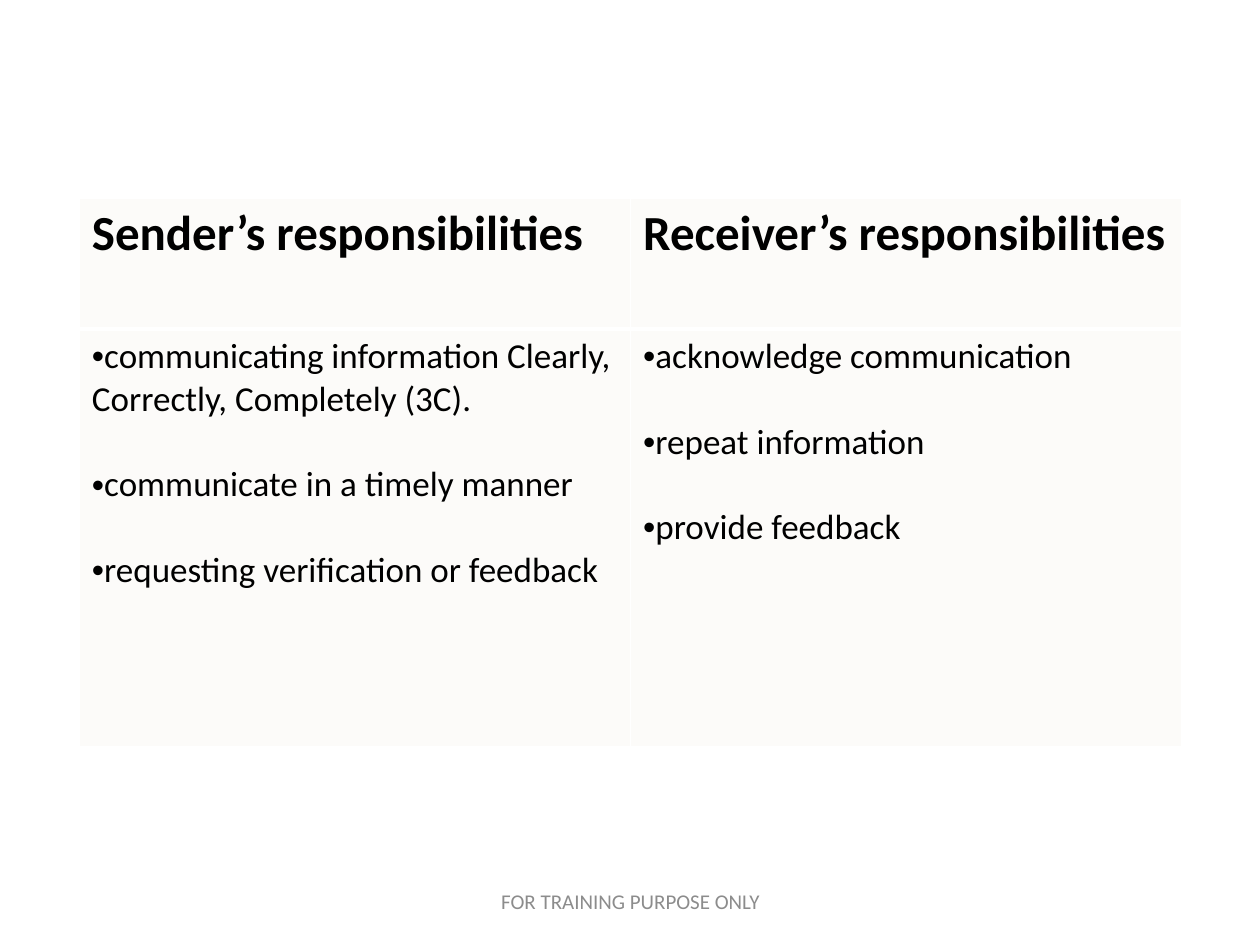
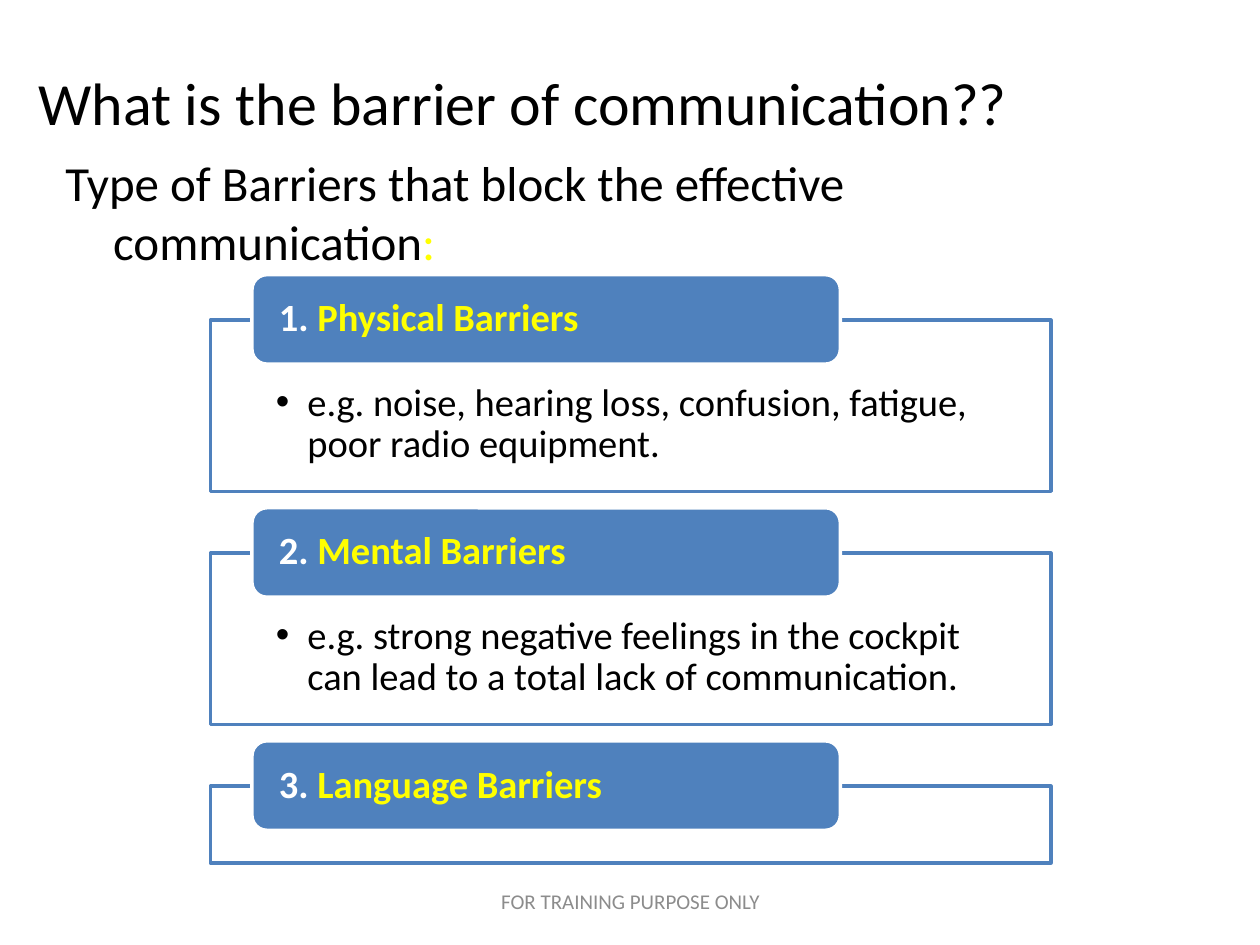
from dataclasses import dataclass

from lxml import etree
from pptx import Presentation
from pptx.dml.color import RGBColor
from pptx.enum.shapes import MSO_SHAPE
from pptx.enum.text import MSO_ANCHOR, PP_ALIGN
from pptx.oxml.ns import qn
from pptx.util import Inches, Pt

RECTANGLE = MSO_SHAPE.RECTANGLE
ROUNDED = MSO_SHAPE.ROUNDED_RECTANGLE
TOP, MIDDLE = MSO_ANCHOR.TOP, MSO_ANCHOR.MIDDLE
LEFT, CENTER = PP_ALIGN.LEFT, PP_ALIGN.CENTER

BLACK = RGBColor(0x00, 0x00, 0x00)
WHITE = RGBColor(0xFF, 0xFF, 0xFF)
YELLOW = RGBColor(0xFF, 0xFF, 0x00)
BLUE = RGBColor(0x4F, 0x81, 0xBD)
GREY = RGBColor(0x8C, 0x8C, 0x8C)
CREAM = RGBColor(0xFC, 0xFB, 0xF9)
FONT = "Calibri"

BARRIER_TOP = 2.18
BARRIER_PITCH = 1.85
LABEL_HEIGHT = 0.71
FRAME_DROP = 0.36


@dataclass(frozen=True)
class Responsibilities:
    heading: str
    duties: tuple[str, ...]


@dataclass(frozen=True)
class Barrier:
    name: str
    example: str
    frame_height: float


ROLES = (
    Responsibilities("Sender’s responsibilities", (
        "communicating information Clearly, Correctly, Completely (3C).",
        "communicate in a timely manner",
        "requesting verification or feedback",
    )),
    Responsibilities("Receiver’s responsibilities", (
        "acknowledge communication",
        "repeat information",
        "provide feedback",
    )),
)

BARRIERS = (
    Barrier("Physical Barriers",
            "e.g. noise, hearing loss, confusion, fatigue, poor radio equipment.", 1.36),
    Barrier("Mental Barriers",
            "e.g. strong negative feelings in the cockpit can lead to a total lack of communication.",
            1.36),
    Barrier("Language Barriers", "", 0.61),
)


def add_run(paragraph, text: str, size: float, color: RGBColor = BLACK, bold: bool = False) -> None:
    run = paragraph.add_run()
    run.text = text
    run.font.name = FONT
    run.font.size = Pt(size)
    run.font.bold = bold
    run.font.color.rgb = color


def set_indent(paragraph, margin: float, bullet: bool = False) -> None:
    properties = paragraph._p.get_or_add_pPr()
    properties.set("marL", str(Inches(margin)))
    properties.set("indent", str(-Inches(margin)))
    if bullet:
        etree.SubElement(properties, qn("a:buFont"), typeface="Arial")
        etree.SubElement(properties, qn("a:buChar"), char="•")


def add_text(slide, left: float, top: float, width: float, height: float,
             anchor=TOP, align=LEFT):
    frame = slide.shapes.add_textbox(
        Inches(left), Inches(top), Inches(width), Inches(height)).text_frame
    frame.word_wrap = True
    frame.vertical_anchor = anchor
    frame.paragraphs[0].alignment = align
    return frame.paragraphs[0]


def add_panel(slide, kind, left: float, top: float, width: float, height: float,
              fill: RGBColor, line: RGBColor):
    panel = slide.shapes.add_shape(
        kind, Inches(left), Inches(top), Inches(width), Inches(height))
    panel.shadow.inherit = False
    panel.fill.solid()
    panel.fill.fore_color.rgb = fill
    panel.line.color.rgb = line
    panel.line.width = Pt(2)
    return panel


def panel_paragraph(panel, side: float, top: float, bottom: float, anchor):
    frame = panel.text_frame
    frame.word_wrap = True
    frame.margin_left = frame.margin_right = Inches(side)
    frame.margin_top, frame.margin_bottom = Inches(top), Inches(bottom)
    frame.vertical_anchor = anchor
    paragraph = frame.paragraphs[0]
    paragraph.alignment = LEFT
    paragraph.line_spacing = 0.9
    return paragraph


def style_cell(cell, top_width: float, bottom_width: float) -> None:
    cell.fill.solid()
    cell.fill.fore_color.rgb = CREAM
    properties = cell._tc.get_or_add_tcPr()
    edges = {"lnL": 1, "lnR": 1, "lnT": top_width, "lnB": bottom_width}
    for position, (edge, width) in enumerate(edges.items()):
        border = etree.Element(qn(f"a:{edge}"), w=str(Pt(width)))
        fill = etree.SubElement(border, qn("a:solidFill"))
        etree.SubElement(fill, qn("a:srgbClr"), val=str(WHITE))
        properties.insert(position, border)


def add_footer(slide) -> None:
    footer = add_text(slide, 3.42, 6.95, 3.17, 0.4, MIDDLE, CENTER)
    add_run(footer, "FOR TRAINING PURPOSE ONLY", 12, GREY)


def add_responsibilities(slide) -> None:
    table = slide.shapes.add_table(
        2, len(ROLES), Inches(0.63), Inches(1.57), Inches(8.75), Inches(4.36)).table
    table.rows[0].height, table.rows[1].height = Inches(1.04), Inches(3.32)
    for column, role in enumerate(ROLES):
        heading, duties = table.cell(0, column), table.cell(1, column)
        style_cell(heading, 1, 3)
        style_cell(duties, 3, 1)
        add_run(heading.text_frame.paragraphs[0], role.heading, 28, bold=True)
        for index, duty in enumerate(role.duties):
            frame = duties.text_frame
            paragraph = frame.add_paragraph() if index else frame.paragraphs[0]
            set_indent(paragraph, 0, bullet=True)
            if index:
                paragraph.space_before = Pt(24.4)
            add_run(paragraph, duty, 20)


def add_barrier(slide, number: int, barrier: Barrier) -> None:
    top = BARRIER_TOP + (number - 1) * BARRIER_PITCH
    frame = add_panel(slide, RECTANGLE, 1.67, top + FRAME_DROP, 6.67,
                      barrier.frame_height, WHITE, BLUE)
    color = frame.fill._xPr.find(qn("a:solidFill"))[0]
    etree.SubElement(color, qn("a:alpha"), val="90000")
    if barrier.example:
        example = panel_paragraph(frame, 0.52, 0.5, 0.17, TOP)
        set_indent(example, 0.25, bullet=True)
        add_run(example, barrier.example, 22)
    label = add_panel(slide, ROUNDED, 2, top, 4.67, LABEL_HEIGHT, BLUE, WHITE)
    name = panel_paragraph(label, 0.18, 0, 0, MIDDLE)
    add_run(name, f"{number}. ", 22, WHITE, bold=True)
    add_run(name, barrier.name, 22, YELLOW, bold=True)


def add_barriers(slide) -> None:
    title = add_text(slide, -0.35, 0.46, 9, 0.7, MIDDLE, CENTER)
    add_run(title, "What is the barrier of communication??", 34.2)
    intro = add_text(slide, 0.42, 1.16, 7.92, 1.17)
    set_indent(intro, 0.38)
    add_run(intro, "Type of Barriers that block the effective communication", 28)
    add_run(intro, ":", 28, YELLOW)
    for number, barrier in enumerate(BARRIERS, start=1):
        add_barrier(slide, number, barrier)


def main() -> None:
    presentation = Presentation()
    presentation.slide_width, presentation.slide_height = Inches(10), Inches(7.5)
    blank = presentation.slide_layouts[6]
    for add_content in (add_responsibilities, add_barriers):
        slide = presentation.slides.add_slide(blank)
        add_content(slide)
        add_footer(slide)
    presentation.save("out.pptx")


if __name__ == "__main__":
    main()
